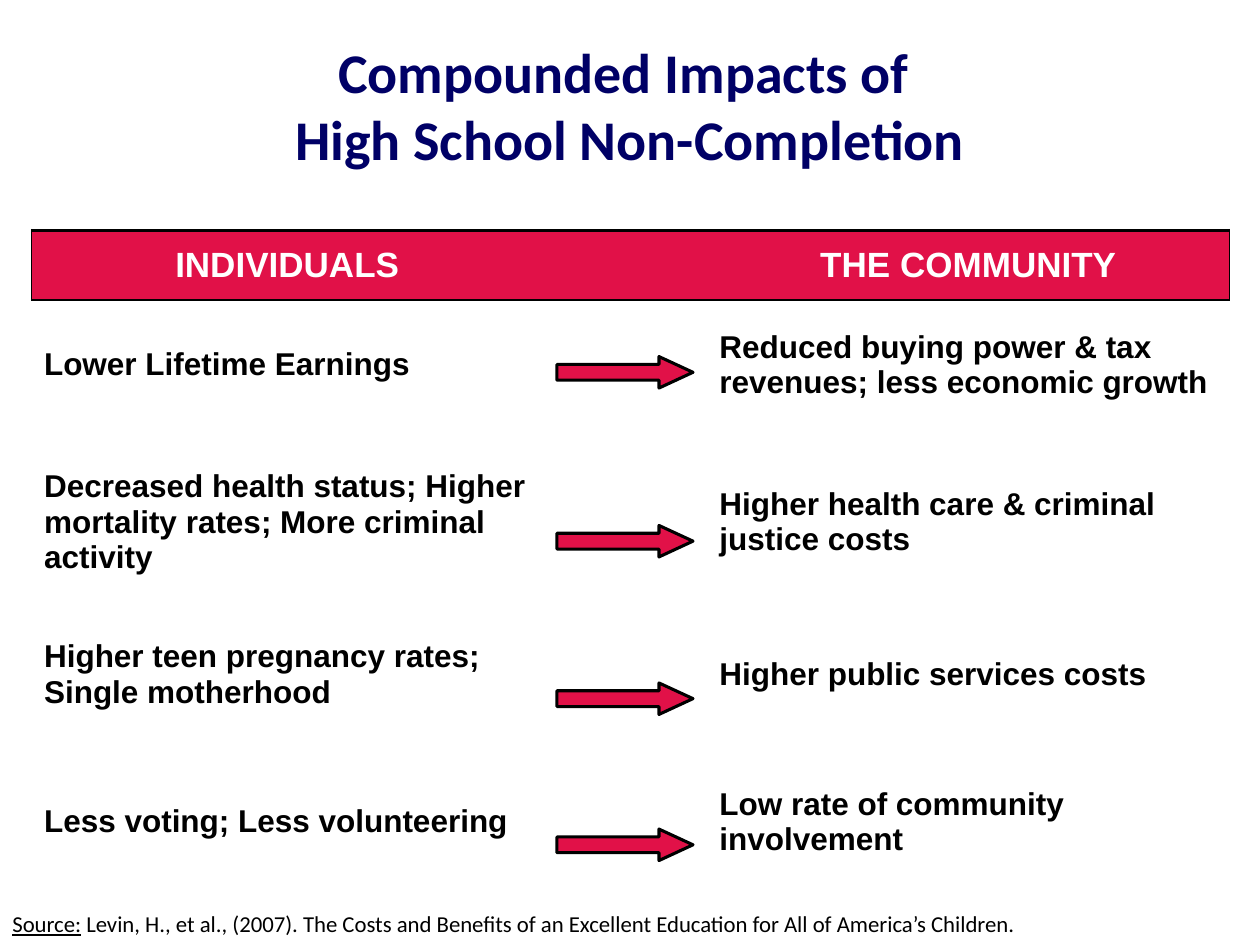
import lxml.etree
import pptx
import pptx.dml.color
import pptx.enum.shapes
import pptx.enum.text
import pptx.oxml.ns
import pptx.util

Inches = pptx.util.Inches
Pt = pptx.util.Pt
ALIGN = pptx.enum.text.PP_ALIGN
RED, BLACK, WHITE, NAVY = "E11148", "000000", "FFFFFF", "000066"
IMPACTS = [
    ("Lower Lifetime Earnings",
     "Reduced buying power & tax revenues; less economic growth"),
    ("Decreased health status; Higher mortality rates; More criminal activity",
     "Higher health care & criminal justice costs"),
    ("Higher teen pregnancy rates; Single motherhood",
     "Higher public services costs"),
    ("Less voting; Less volunteering", "Low rate of community involvement"),
]
COLUMN_WIDTHS = [4.06, 1.3, 4.15]
ROW_HEIGHTS = [0.55, 1.03, 0.22, 1.03, 0.22, 0.95, 0.22, 0.95]
ARROW_TOPS = [2.83, 4.17, 5.42, 6.58]


def color(value):
    return pptx.dml.color.RGBColor.from_string(value)


def paint(fill, value):
    fill.solid()
    fill.fore_color.rgb = color(value)


def add_run(para, text, size, font, shade, bold=False, underline=False):
    span = para.add_run()
    span.text = text
    span.font.size = Pt(size)
    span.font.name = font
    span.font.color.rgb = color(shade)
    span.font.bold = bold
    span.font.underline = underline


def add_box(page, left, top, width, height):
    box = page.shapes.add_textbox(
        Inches(left), Inches(top), Inches(width), Inches(height))
    box.text_frame.word_wrap = True
    return box.text_frame


def add_title(page, lines):
    frame = add_box(page, 0.25, 0.25, 9.5, 1.17)
    for index, line in enumerate(lines):
        para = frame.add_paragraph() if index else frame.paragraphs[0]
        para.alignment = ALIGN.CENTER
        add_run(para, line, 32, "Calibri", NAVY, bold=True)


def add_source(page):
    para = add_box(page, 0, 7.17, 10, 0.32).paragraphs[0]
    add_run(para, "Source:", 13, "Calibri", BLACK, underline=True)
    add_run(para, " Levin, H., et al., (2007). The Costs and Benefits of an "
            "Excellent Education for All of America’s Children.",
            13, "Calibri", BLACK)


def set_borders(cell, widths):
    properties = cell._tc.get_or_add_tcPr()
    for index, (side, width) in enumerate(widths.items()):
        line = lxml.etree.Element(
            pptx.oxml.ns.qn("a:ln" + side), w=str(Pt(width)))
        fill = lxml.etree.SubElement(line, pptx.oxml.ns.qn("a:solidFill"))
        lxml.etree.SubElement(fill, pptx.oxml.ns.qn("a:srgbClr"), val=BLACK)
        properties.insert(index, line)


def fill_cell(cell, text, size, shade, alignment):
    cell.vertical_anchor = pptx.enum.text.MSO_ANCHOR.MIDDLE
    para = cell.text_frame.paragraphs[0]
    para.alignment = alignment
    if text:
        add_run(para, text, size, "Arial", shade, bold=True)
    else:
        lxml.etree.SubElement(
            para._p, pptx.oxml.ns.qn("a:endParaRPr"), sz="600")


def add_impact_table(page):
    frame = page.shapes.add_table(
        len(ROW_HEIGHTS), len(COLUMN_WIDTHS),
        Inches(0.25), Inches(1.83), Inches(9.5), Inches(5.21))
    table = frame.table
    table.first_row = table.horz_banding = False
    style = table._tbl.tblPr.find(pptx.oxml.ns.qn("a:tableStyleId"))
    style.text = "{2D5ABB26-0587-4C30-8999-92F81FD0307C}"
    for column, width in zip(table.columns, COLUMN_WIDTHS):
        column.width = Inches(width)
    for row, height in zip(table.rows, ROW_HEIGHTS):
        row.height = Inches(height)

    headings = ["INDIVIDUALS", "", "THE COMMUNITY"]
    outer_sides = [{"L": 1}, {}, {"R": 1}]
    for cell, text, sides in zip(table.rows[0].cells, headings, outer_sides):
        fill_cell(cell, text, 20, WHITE, ALIGN.CENTER)
        paint(cell.fill, RED)
        set_borders(cell, {**sides, "T": 2.25, "B": 1})

    for index in range(1, len(ROW_HEIGHTS)):
        texts = ("", "", "")
        if index % 2:
            individual, community = IMPACTS[index // 2]
            texts = (individual, "", community)
        for cell, text in zip(table.rows[index].cells, texts):
            fill_cell(cell, text, 18, BLACK, ALIGN.LEFT)
            cell.fill.background()


def add_arrow(page, top):
    arrow = page.shapes.add_shape(
        pptx.enum.shapes.MSO_SHAPE.RIGHT_ARROW,
        Inches(4.42), Inches(top), Inches(1.08), Inches(0.25))
    arrow.adjustments[0] = 0.5
    arrow.adjustments[1] = 1.08
    arrow.shadow.inherit = False
    paint(arrow.fill, RED)
    arrow.line.color.rgb = color(BLACK)
    arrow.line.width = Pt(1.75)


def main():
    deck = pptx.Presentation()
    deck.slide_width, deck.slide_height = Inches(10), Inches(7.5)
    page = deck.slides.add_slide(deck.slide_layouts[6])
    add_title(page, ["Compounded Impacts of ", "High School Non-Completion"])
    add_source(page)
    add_impact_table(page)
    for top in ARROW_TOPS:
        add_arrow(page, top)
    deck.save("out.pptx")


if __name__ == "__main__":
    main()
